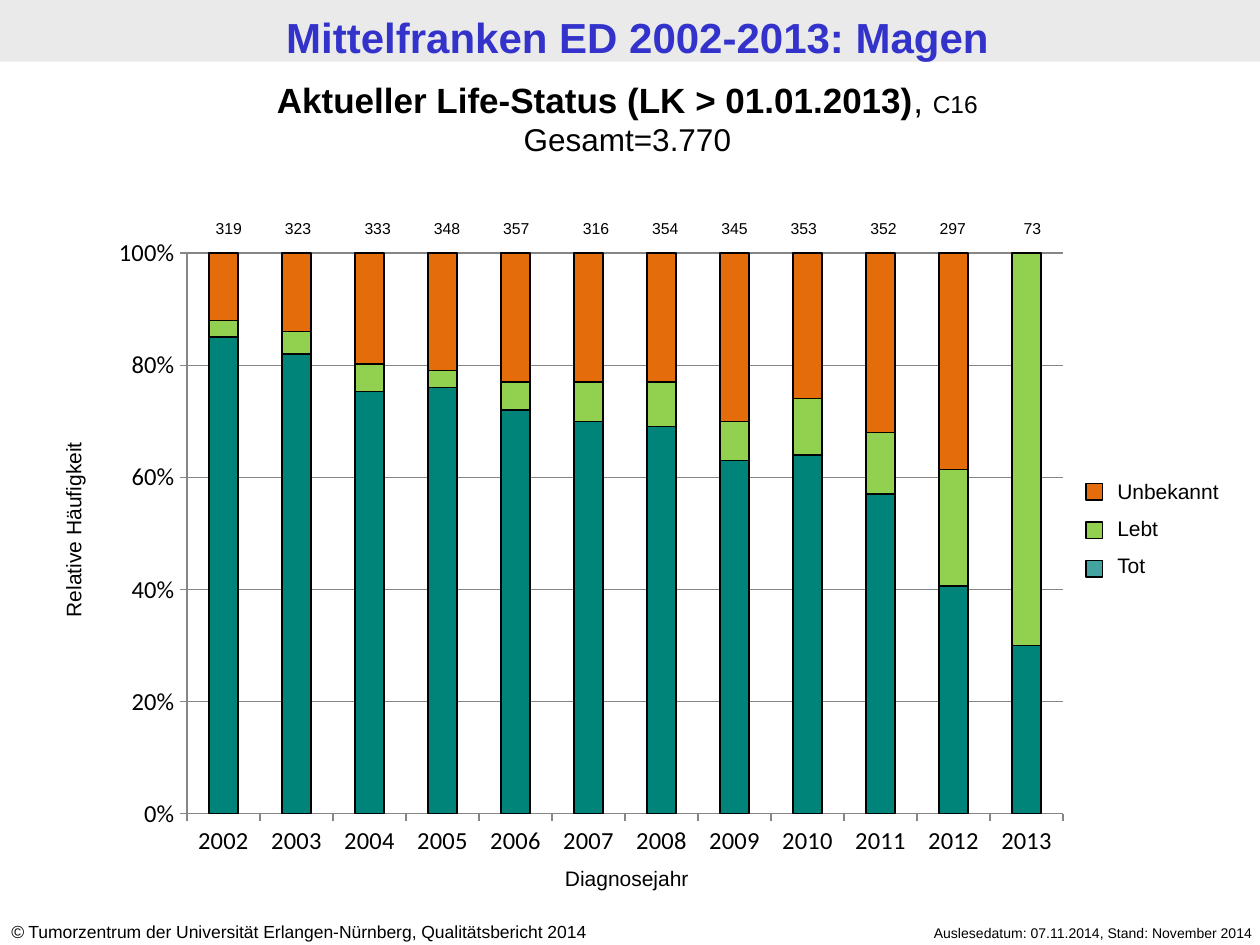
from lxml import etree
from pptx import Presentation, util as u
from pptx.chart.data import CategoryChartData
from pptx.dml.color import RGBColor
from pptx.enum import chart as charts, shapes, text
from pptx.oxml import parse_xml
from pptx.oxml.ns import nsdecls, qn

Pt = u.Pt
LEFT, CENTER, RIGHT = text.PP_ALIGN.LEFT, text.PP_ALIGN.CENTER, text.PP_ALIGN.RIGHT

THEME = {
    "font": "Arial", "chart_font": "Calibri",
    "black": "000000", "band": "EAEAEA", "title": "3333CC", "grid": "868686",
    "dead": "008378", "dead_key": "008380", "alive": "92D050", "unknown": "E46C0A",
    "title_size": 24, "heading_size": 20, "total_size": 18, "axis_size": 14,
    "label_size": 12, "source_size": 10, "count_size": 9, "date_size": 8,
}

YEARS = [str(year) for year in range(2002, 2014)]
SERIES = [
    ("Tot", "dead", [85, 82, 76, 76, 72, 70, 69, 63, 64, 57, 41, 30]),
    ("Lebt", "alive", [3, 4, 5, 3, 5, 7, 8, 7, 10, 11, 21, 70]),
    ("Unbekannt", "unknown", [12, 14, 20, 21, 23, 23, 23, 30, 26, 32, 39, 0]),
]
COUNT_GROUPS = [(319, 323), (333, 348, 357), (316, 354, 345, 353), (352, 297), (73,)]
LEGEND = [("Unbekannt", "unknown", 100), ("Lebt", "alive", 100), ("Tot", "dead_key", 74)]

# Each text: box (left, top, width, height), paragraphs of (wording, font format) runs, options
TEXTS = [
    ((4.3, 0.7, 720, 35.3),
     [[("Mittelfranken ED 2002-2013: Magen",
        {"size": "title_size", "color": "title", "bold": True})]],
     {"align": CENTER, "insets": (6.5, 6, 6.5, 0)}),
    ((478.8, 524.9, 244.1, 17.3),
     [[("Auslesedatum: 07.11.2014, Stand: November 2014", {"size": "date_size"})]],
     {"align": RIGHT}),
    ((-0.7, 522.7, 377.3, 19.4),
     [[("©", {"size": "source_size", "italic": True}),
       (" Tumorzentrum der Universität Erlangen-Nürnberg, Qualitätsbericht 2014",
        {"size": "source_size"})]], {}),
    ((-44.6, 291.6, 173.5, 22.3),
     [[("Relative Häufigkeit", {"size": "label_size"})]],
     {"align": CENTER, "rotation": 270}),
    ((277.2, 491, 162, 22.3),
     [[("Diagnosejahr", {"size": "label_size"})]], {"align": CENTER}),
    ((-2.9, 41, 722.9, 53.3),
     [[("Aktueller Life-Status (LK > 01.01.2013)", {"size": "heading_size", "bold": True}),
       (", ", {"size": "heading_size"}), ("C16", {"size": "axis_size"})],
      [("Gesamt=3.770", {"size": "total_size"})]],
     {"align": CENTER, "anchor": text.MSO_ANCHOR.MIDDLE}),
    ((631.4, 270, 88.6, 65.5),
     [[(name, {"size": "label_size"})] for name, _, _ in LEGEND], {"gap": 6.8}),
]

CHART_BOX = (56.9, 128.9, 561.6, 367.9)
PLOT_BOX = (106.9, 144.6, 500.6, 320.5)
COUNT_LEFT, COUNT_TOP, COUNT_STEP, COUNT_GROUP_GAP = 110.9, 121.2, 39.6, 5.9
KEY_LEFT, KEY_TOP, KEY_STEP, KEY_SIZE = 620.6, 276.3, 22, 9.4


def points(box):
    return [Pt(length) for length in box]


def rgb(name):
    return RGBColor.from_string(THEME[name])


def add_text(slide, box, paragraphs, align=LEFT, insets=(7.2, 3.6, 7.2, 3.6),
             anchor=text.MSO_ANCHOR.TOP, rotation=0, gap=0):
    shape = slide.shapes.add_textbox(*points(box))
    shape.rotation = rotation
    frame = shape.text_frame
    left, top, right, bottom = points(insets)
    settings = {"word_wrap": True, "vertical_anchor": anchor, "margin_left": left,
                "margin_top": top, "margin_right": right, "margin_bottom": bottom}
    for name, value in settings.items():
        setattr(frame, name, value)
    for index, runs in enumerate(paragraphs):
        paragraph = frame.add_paragraph() if index else frame.paragraphs[0]
        paragraph.alignment = align
        if index and gap:
            paragraph.space_before = Pt(gap)
        for wording, style in runs:
            run = paragraph.add_run()
            run.text = wording
            run.font.color.rgb = rgb(style.get("color", "black"))
            font = {"name": THEME["font"], "size": Pt(THEME[style["size"]]),
                    "bold": style.get("bold", False), "italic": style.get("italic", False)}
            for name, value in font.items():
                setattr(run.font, name, value)


def outline(line, color="black"):
    line.color.rgb = rgb(color)
    line.width = Pt(0.75)


def add_rectangle(slide, box, color, opacity=100, outlined=False):
    shape = slide.shapes.add_shape(shapes.MSO_SHAPE.RECTANGLE, *points(box))
    shape.shadow.inherit = False
    shape.fill.solid()
    shape.fill.fore_color.rgb = rgb(color)
    if opacity < 100:
        color_element = shape.fill._xPr.find(qn("a:solidFill"))[0]
        etree.SubElement(color_element, qn("a:alpha"), val=str(opacity * 1000))
    if outlined:
        outline(shape.line)
    else:
        shape.line.fill.background()


def fix_plot_area(chart):
    """Pin the inner plot area to PLOT_BOX, as fractions of CHART_BOX."""
    left, top, width, height = CHART_BOX
    fractions = {"x": (PLOT_BOX[0] - left) / width, "y": (PLOT_BOX[1] - top) / height,
                 "w": PLOT_BOX[2] / width, "h": PLOT_BOX[3] / height}
    modes = '<c:xMode val="edge"/><c:yMode val="edge"/>'
    sizes = "".join(f'<c:{name} val="{value:.4f}"/>' for name, value in fractions.items())
    layout = parse_xml(f'<c:layout {nsdecls("c")}><c:manualLayout>'
                       f'<c:layoutTarget val="inner"/>{modes}{sizes}'
                       '</c:manualLayout></c:layout>')
    plot_area = chart._chartSpace.chart.plotArea
    for old in plot_area.findall(qn("c:layout")):
        plot_area.remove(old)
    plot_area.insert(0, layout)


def add_status_chart(slide):
    data = CategoryChartData()
    data.categories = YEARS
    for name, _, values in SERIES:
        data.add_series(name, values)
    chart = slide.shapes.add_chart(charts.XL_CHART_TYPE.COLUMN_STACKED_100,
                                   *points(CHART_BOX), data).chart
    chart.has_legend = chart.has_title = False
    chart.font.name = THEME["chart_font"]
    chart.font.size = Pt(THEME["axis_size"])
    chart.font.color.rgb = rgb("black")
    plot = chart.plots[0]
    for name, value in {"gap_width": 150, "overlap": 100, "vary_by_categories": False}.items():
        setattr(plot, name, value)
    for series, (_, color, _) in zip(plot.series, SERIES):
        series.format.fill.solid()
        series.format.fill.fore_color.rgb = rgb(color)
        outline(series.format.line)
    for axis in (chart.category_axis, chart.value_axis):
        axis.major_tick_mark = charts.XL_TICK_MARK.OUTSIDE
        axis.minor_tick_mark = charts.XL_TICK_MARK.NONE
        axis.tick_labels.font.size = Pt(THEME["axis_size"])
        outline(axis.format.line, "grid")
    value_axis = chart.value_axis
    scale = {"minimum_scale": 0, "maximum_scale": 1, "major_unit": 0.2,
             "has_major_gridlines": True}
    for name, value in scale.items():
        setattr(value_axis, name, value)
    outline(value_axis.major_gridlines.format.line, "grid")
    value_axis.tick_labels.number_format = "0%"
    value_axis.tick_labels.number_format_is_linked = False
    fix_plot_area(chart)


def add_counts(slide):
    left = COUNT_LEFT
    for group in COUNT_GROUPS:
        for count in group:
            add_text(slide, (left, COUNT_TOP, COUNT_STEP, 18),
                     [[(str(count), {"size": "count_size"})]], align=CENTER)
            left += COUNT_STEP
        left += COUNT_GROUP_GAP


def main():
    presentation = Presentation()
    presentation.slide_width, presentation.slide_height = Pt(720), Pt(540)
    slide = presentation.slides.add_slide(presentation.slide_layouts[6])
    add_rectangle(slide, (0, 0, 720, 35.3), "band")
    add_status_chart(slide)
    for box, paragraphs, options in TEXTS:
        add_text(slide, box, paragraphs, **options)
    add_counts(slide)
    for index, (_, color, opacity) in enumerate(LEGEND):
        add_rectangle(slide, (KEY_LEFT, KEY_TOP + index * KEY_STEP, KEY_SIZE, KEY_SIZE),
                      color, opacity, outlined=True)
    presentation.save("out.pptx")


if __name__ == "__main__":
    main()
